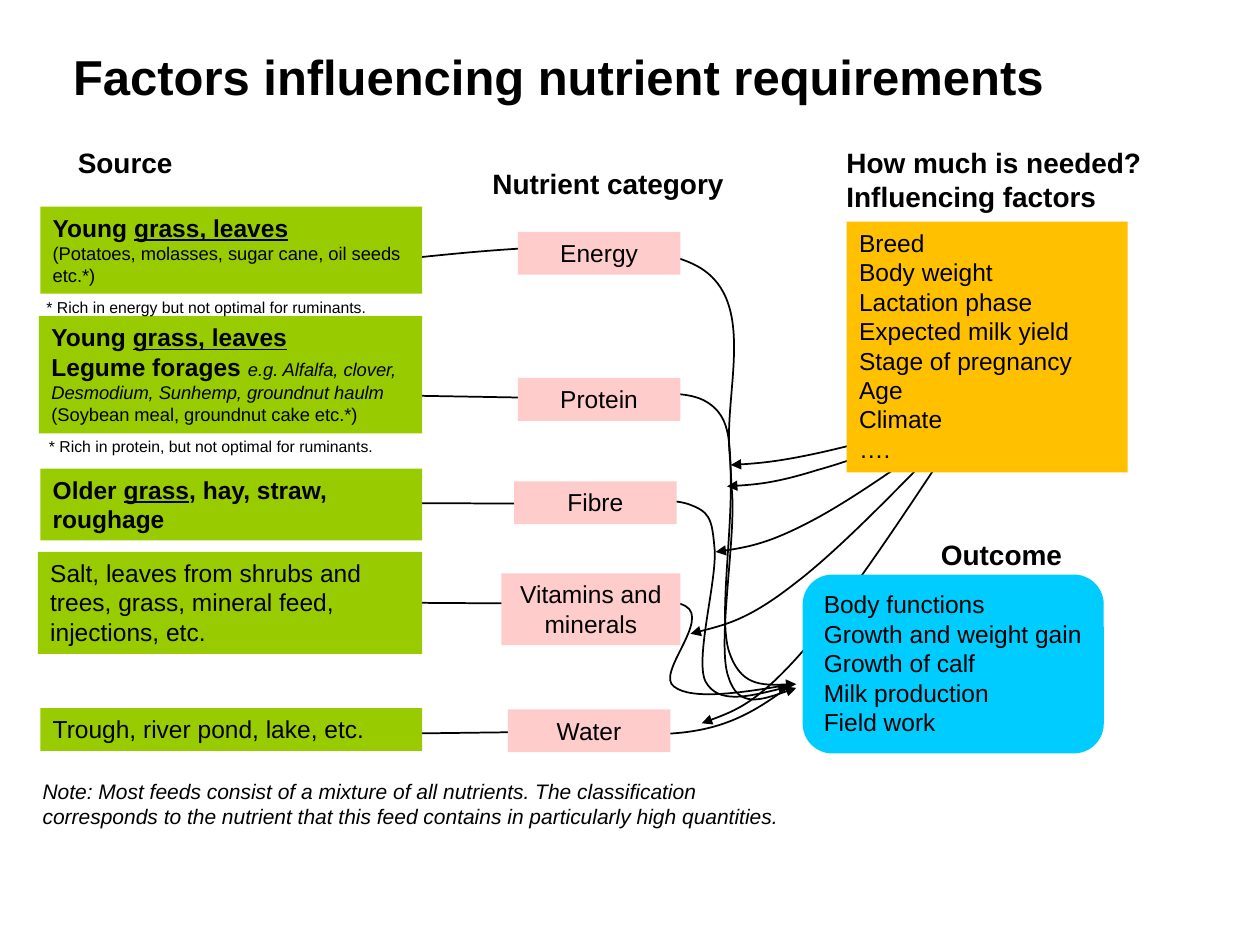
from dataclasses import dataclass

from lxml import etree
from pptx import Presentation
from pptx import util as u
from pptx.dml.color import RGBColor
from pptx.enum import shapes, text
from pptx.oxml.ns import qn

PX = 9144


@dataclass(frozen=True)
class Theme:
    """Colours, font and type sizes of the slide."""
    font: str = "Arial"
    ink: str = "000000"
    source: str = "99CC00"
    nutrient: str = "FFCCCC"
    factor: str = "FFC000"
    outcome: str = "00CCFF"
    title: float = 28
    heading: float = 16
    body: float = 14
    note: float = 12
    detail: float = 10.5
    footnote: float = 9
    line: float = 1


T = Theme()


def write(sp, lines, size, style="", wrap=True, align=text.PP_ALIGN.LEFT):
    """Fill a shape with lines, each a string or a list of (text, style, size) runs."""
    tf = sp.text_frame
    tf.word_wrap = wrap
    tf.auto_size = text.MSO_AUTO_SIZE.SHAPE_TO_FIT_TEXT
    tf.vertical_anchor = text.MSO_ANCHOR.TOP
    for i, line in enumerate(lines):
        runs = [(line, style, size)] if isinstance(line, str) else line
        p = tf.paragraphs[0] if i == 0 else tf.add_paragraph()
        p.alignment = align
        for words, marks, points in runs:
            r = p.add_run()
            r.text = words
            r.font.name = T.font
            r.font.size = u.Pt(points)
            r.font.color.rgb = RGBColor.from_string(T.ink)
            r.font.bold = "b" in marks
            r.font.italic = "i" in marks
            r.font.underline = "u" in marks
    return tf


def label(s, box, lines, size, style="", wrap=True):
    """Add a text box and return its text frame."""
    sp = s.shapes.add_textbox(*(n * PX for n in box))
    return write(sp, lines, size, style, wrap)


def panel(s, box, color, lines, kind=shapes.MSO_SHAPE.RECTANGLE, **options):
    """Add a filled shape without outline that holds body text."""
    sp = s.shapes.add_shape(kind, *(n * PX for n in box))
    sp.shadow.inherit = False
    sp.fill.solid()
    sp.fill.fore_color.rgb = RGBColor.from_string(color)
    sp.line.fill.background()
    write(sp, lines, T.body, **options)


def curve(s, origin, points, arrow=True):
    """Draw a Bezier line: a start point, then three points for each segment."""
    fb = s.shapes.build_freeform(*points[0], scale=PX)
    fb.add_line_segments(points[1:], close=False)
    sp = fb.convert_to_shape(*(n * PX for n in origin))
    sp.shadow.inherit = False
    sp.fill.background()
    sp.line.color.rgb = RGBColor.from_string(T.ink)
    sp.line.width = u.Pt(T.line)
    steps = list(sp._element.iter(qn("a:lnTo")))
    outline = steps[0].getparent()
    for i in range(0, len(steps), 3):
        cubic = etree.SubElement(outline, qn("a:cubicBezTo"))
        for step in steps[i:i + 3]:
            cubic.append(step[0])
            outline.remove(step)
    if arrow:
        ln = sp._element.spPr.find(qn("a:ln"))
        etree.SubElement(ln, qn("a:tailEnd"), type="triangle")


def nutrient_flows(s, x, y):
    """Draw the lines from the sources through the nutrients to the outcome."""
    flows = [
        ([(64, 483), (64, 483), (221, 481), (221, 481), (269, 481), (318, 486), (352, 480),
          (387, 474), (408, 458), (429, 443)], False),
        ([(58, 378), (58, 378), (212, 379), (212, 379), (259, 379), (323, 370), (344, 381),
          (364, 392), (320, 435), (335, 445), (349, 456), (389, 450), (429, 443)], False),
        ([(58, 299), (58, 299), (269, 300), (269, 300), (317, 300), (330, 295), (346, 300),
          (363, 306), (365, 311), (367, 334), (370, 358), (351, 423), (360, 441),
          (370, 459), (398, 452), (426, 445)], True),
        ([(63, 213), (63, 213), (239, 216), (239, 216), (288, 217), (336, 206), (359, 218),
          (383, 231), (378, 255), (381, 291), (384, 328), (369, 412), (378, 437),
          (386, 463), (409, 454), (432, 446)], True),
        ([(72, 111), (186, 98), (300, 85), (351, 110), (402, 135), (375, 208), (379, 259),
          (384, 309), (370, 384), (378, 415), (387, 445), (409, 444), (432, 443)], True),
    ]
    for points, arrow in flows:
        curve(s, (x, y), points, arrow)


def influence_arrows(s, x, y):
    """Draw the arrows from the influencing factors to the nutrient lines."""
    for points in [
        [(271, 29), (225, 62), (179, 95), (145, 113), (111, 131), (90, 135), (68, 138)],
        [(270, 29), (219, 81), (169, 134), (131, 163), (94, 192), (71, 197), (48, 203)],
        [(270, 27), (227, 40), (183, 52), (152, 59), (120, 66), (100, 68), (80, 69)],
        [(270, 29), (226, 46), (182, 64), (149, 73), (117, 83), (97, 85), (77, 86)],
        [(270, 29), (221, 103), (173, 177), (137, 217), (101, 258), (79, 266), (57, 274)],
    ]:
        curve(s, (x, y), points)


def title(s, x, y, w, h):
    """Place the slide title."""
    tf = label(s, (x, y, w, h), ["Factors influencing nutrient requirements"], T.title, "b")
    tf.auto_size = text.MSO_AUTO_SIZE.NONE
    tf.vertical_anchor = text.MSO_ANCHOR.MIDDLE
    tf.margin_left = tf.margin_top = 0


def sources(s, x, y, w):
    """Place the feed sources with their heading and footnotes."""
    young = [("Young ", "b", T.body), ("grass, leaves", "bu", T.body)]
    older = [("Older ", "b", T.body), ("grass", "bu", T.body),
             (", hay, straw, roughage", "b", T.body)]
    legumes = [("Legume forages ", "b", T.body),
               ("e.g. Alfalfa, clover, Desmodium, Sunhemp, groundnut haulm", "i", T.detail)]
    energy = [("(Potatoes, molasses, sugar cane, oil seeds etc.*)", "", T.detail)]
    protein = [("(Soybean meal, groundnut cake etc.*)", "", T.detail)]
    label(s, (x + 22, y, 96, 37), ["Source"], T.heading, "b", wrap=False)
    for dx, dy, h, lines in [
        (2, 53, 69, [young, energy]),
        (1, 140, 93, [young, legumes, protein]),
        (2, 261, 57, [older]),
        (0, 327, 81, ["Salt, leaves from shrubs and trees, grass, mineral feed, injections, etc."]),
        (2, 451, 34, ["Trough, river pond, lake, etc."]),
    ]:
        panel(s, (x + dx, y + dy, w - dx, h), T.source, lines)
    for dx, dy, note in [(-3, 120, "* Rich in energy but not optimal for ruminants."),
                         (-1, 231, "* Rich in protein, but not optimal for ruminants.")]:
        label(s, (x + dx, y + dy, 471, 25), [note], T.footnote)


def nutrients(s, x, y):
    """Place the nutrient categories under their heading."""
    label(s, (x, y, 257, 37), ["Nutrient category"], T.heading, "b")
    for dx, dy, w, h, name in [(30, 57, 129, 34, "Energy"), (30, 173, 129, 34, "Protein"),
                               (27, 255, 129, 34, "Fibre"),
                               (17, 328, 142, 57, "Vitamins and minerals"),
                               (22, 436, 129, 34, "Water")]:
        panel(s, (x + dx, y + dy, w, h), T.nutrient, [name], align=text.PP_ALIGN.CENTER)


def factors(s, x, y, w):
    """Place the influencing factors under their heading."""
    label(s, (x, y, w, 64), ["How much is needed?", "Influencing factors"],
          T.heading, "b", wrap=False)
    panel(s, (x + 10, y + 65, 223, 199), T.factor,
          ["Breed", "Body weight", "Lactation phase", "Expected milk yield",
           "Stage of pregnancy", "Age", "Climate", "…."])


def outcome(s, x, y, w):
    """Place the outcome under its heading."""
    label(s, (x + 100, y, 117, 37), ["Outcome"], T.heading, "b", wrap=False)
    panel(s, (x, y + 34, w, 142), T.outcome,
          ["Body functions", "Growth and weight gain", "Growth of calf",
           "Milk production", "Field work"],
          kind=shapes.MSO_SHAPE.ROUNDED_RECTANGLE, wrap=False)


def main():
    """Build and save the slide."""
    prs = Presentation()
    prs.slide_width, prs.slide_height = 1000 * PX, 750 * PX
    s = prs.slides.add_slide(prs.slide_layouts[6])
    nutrient_flows(s, 200, 100)
    influence_arrows(s, 500, 300)
    title(s, 58, 25, 902, 76)
    sources(s, 30, 111, 305)
    nutrients(s, 381, 127)
    factors(s, 662, 111, 257)
    outcome(s, 637, 422, 239)
    label(s, (24, 613, 614, 50),
          ["Note: Most feeds consist of a mixture of all nutrients. The classification "
           "corresponds to the nutrient that this feed contains in particularly high "
           "quantities."], T.note, "i")
    prs.save("out.pptx")


if __name__ == "__main__":
    main()
